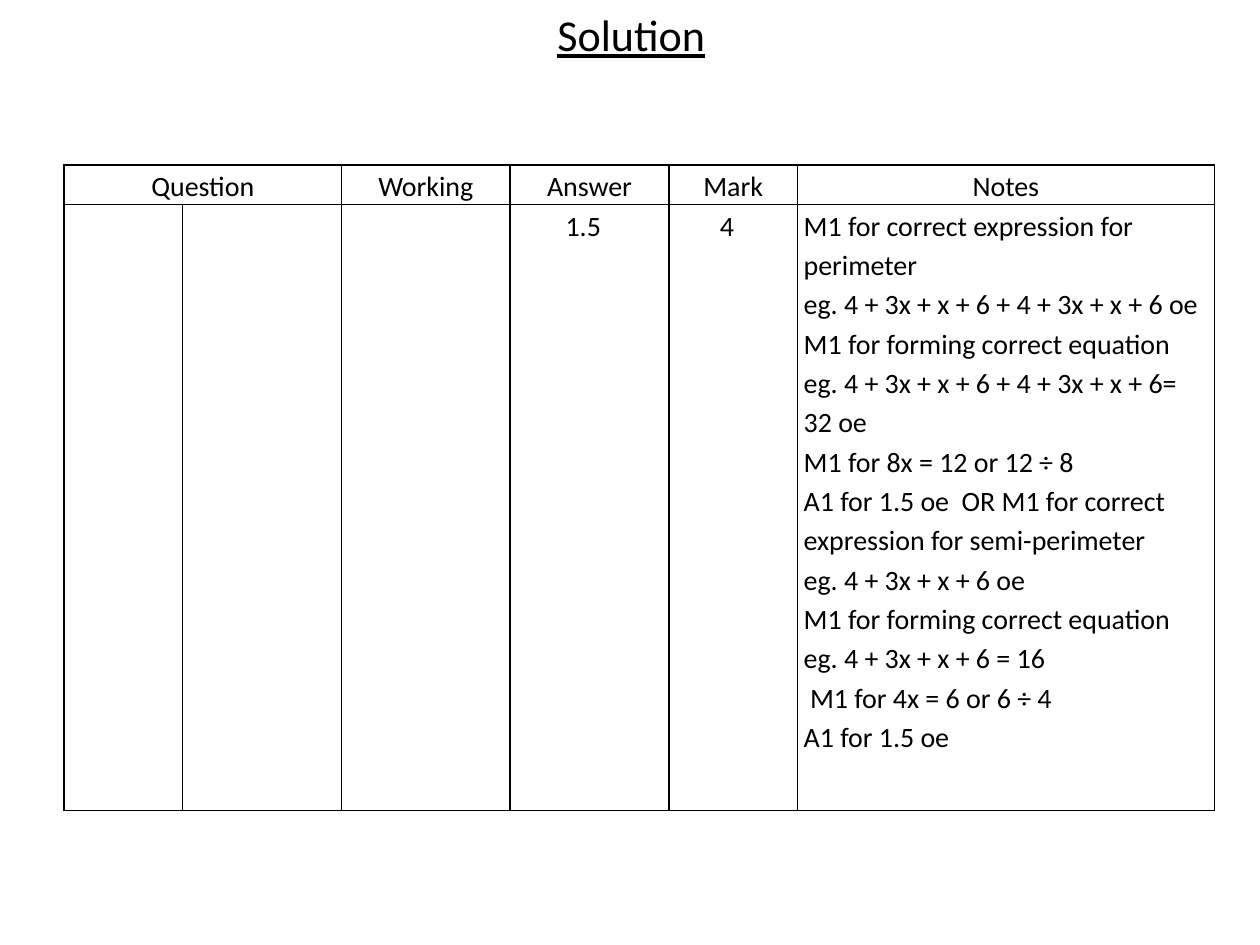
from lxml import etree
from pptx import Presentation
from pptx.dml.color import RGBColor
from pptx.enum.text import MSO_ANCHOR, PP_ALIGN
from pptx.oxml.ns import qn
from pptx.util import Inches, Pt

CENTER = PP_ALIGN.CENTER
LEFT = PP_ALIGN.LEFT
MIDDLE = MSO_ANCHOR.MIDDLE
TOP = MSO_ANCHOR.TOP
FONT = "Calibri"
INK = "000000"
LEFT_EDGE = 0.51
COLUMNS = [0.94, 1.26, 1.34, 1.26, 1.02, 3.31]
ROWS = [0.31, 4.81]
HEADINGS = {0: "Question", 2: "Working", 3: "Answer", 4: "Mark", 5: "Notes"}
RESULTS = {3: "1.5", 4: "4"}
MARK_SCHEME = [
    "M1 for correct expression for perimeter ",
    "eg. 4 + 3x + x + 6 + 4 + 3x + x + 6 oe ",
    "M1 for forming correct equation ",
    "eg. 4 + 3x + x + 6 + 4 + 3x + x + 6= 32 oe ",
    "M1 for 8x = 12 or 12 ÷ 8 ",
    "A1 for 1.5 oe  OR M1 for correct expression for semi-perimeter ",
    "eg. 4 + 3x + x + 6 oe ",
    "M1 for forming correct equation ",
    "eg. 4 + 3x + x + 6 = 16",
    " M1 for 4x = 6 or 6 ÷ 4 ",
    "A1 for 1.5 oe",
]


def color(value):
    return RGBColor.from_string(value)


def add_run(paragraph, text, size, underline=None):
    run = paragraph.add_run()
    run.text = text
    run.font.name = FONT
    run.font.size = Pt(size)
    run.font.underline = underline
    run.font.color.rgb = color(INK)


def add_title(slide, text):
    title = slide.shapes.title
    title.left, title.top = Inches(LEFT_EDGE), 0
    title.width, title.height = Inches(9), Inches(0.54)
    title.text_frame.vertical_anchor = MIDDLE
    paragraph = title.text_frame.paragraphs[0]
    paragraph.alignment = CENTER
    add_run(paragraph, text, 25.2, True)


def outline_cell(cell):
    properties = cell._tc.get_or_add_tcPr()
    for position, side in enumerate(("a:lnL", "a:lnR", "a:lnT", "a:lnB")):
        border = etree.Element(qn(side), w=str(Pt(1)))
        fill = etree.SubElement(border, qn("a:solidFill"))
        etree.SubElement(fill, qn("a:srgbClr"), val=INK)
        properties.insert(position, border)


def format_cell(cell):
    cell.fill.background()
    cell.margin_left = cell.margin_right = Inches(0.05)
    cell.margin_top = cell.margin_bottom = 0
    outline_cell(cell)


def write_cell(cell, lines, alignment=CENTER, anchor=TOP):
    cell.vertical_anchor = anchor
    paragraph = cell.text_frame.paragraphs[0]
    paragraph.alignment = alignment
    paragraph.line_spacing = 1.15
    for number, line in enumerate(lines):
        if number:
            paragraph.add_line_break()
        add_run(paragraph, line, 16)


def add_solution_table(slide):
    table = slide.shapes.add_table(
        len(ROWS), len(COLUMNS), Inches(LEFT_EDGE), Inches(1.31),
        Inches(sum(COLUMNS)), Inches(sum(ROWS))).table
    table.first_row = table.horz_banding = False
    for column, width in zip(table.columns, COLUMNS):
        column.width = Inches(width)
    for row, height in zip(table.rows, ROWS):
        row.height = Inches(height)
    for cell in table.iter_cells():
        format_cell(cell)
    table.cell(0, 0).merge(table.cell(0, 1))
    for column, heading in HEADINGS.items():
        write_cell(table.cell(0, column), [heading],
                   anchor=TOP if column else MIDDLE)
    for column, result in RESULTS.items():
        cell = table.cell(1, column)
        write_cell(cell, [result])
        cell.margin_right = Inches(0.15)
    write_cell(table.cell(1, 5), MARK_SCHEME, LEFT)


def main():
    presentation = Presentation()
    presentation.slide_width = Inches(10)
    presentation.slide_height = Inches(7.5)
    slide = presentation.slides.add_slide(presentation.slide_layouts[5])
    add_title(slide, "Solution")
    add_solution_table(slide)
    presentation.save("out.pptx")


if __name__ == "__main__":
    main()
